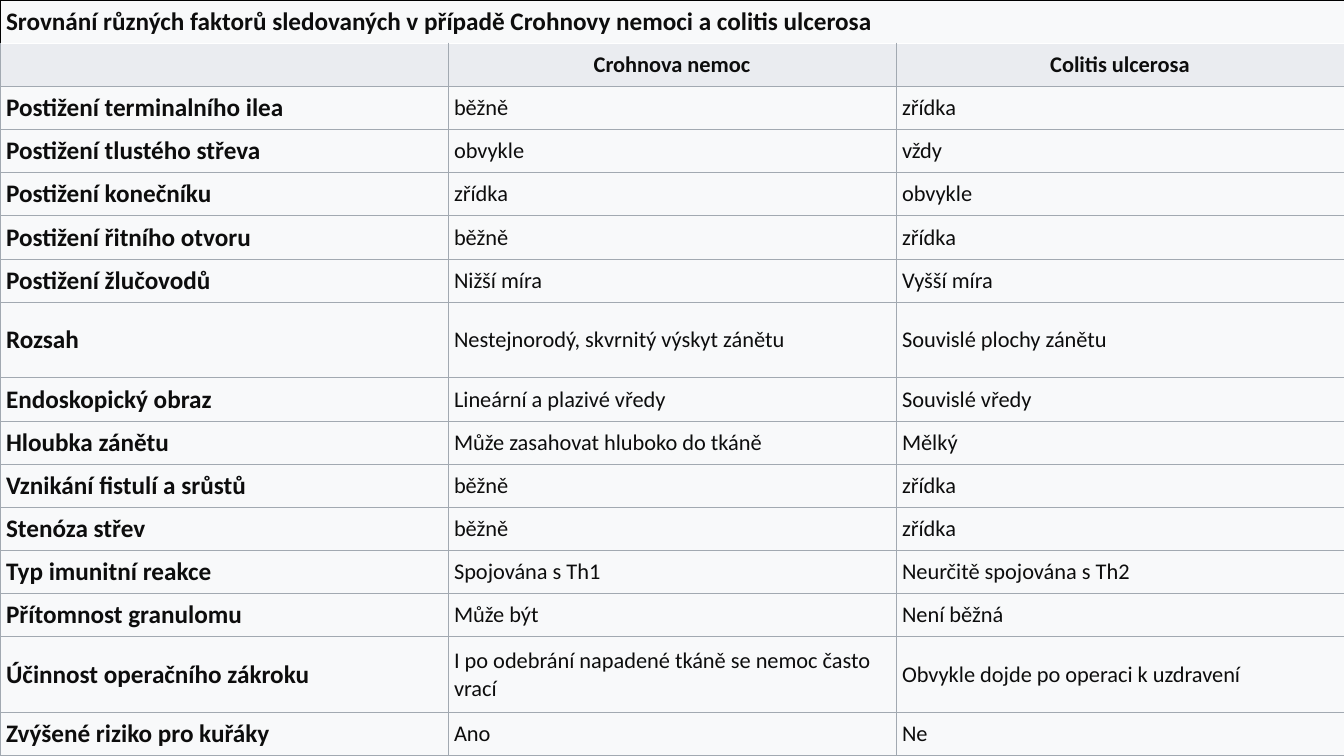
"""Build a slide comparing Crohn's disease with ulcerative colitis."""
import pptx
import pptx.dml.color
import pptx.enum.text
import pptx.oxml
import pptx.oxml.ns
import pptx.util

TITLE = "Srovnání různých faktorů sledovaných v případě Crohnovy nemoci a colitis ulcerosa"
DISEASES = ("", "Crohnova nemoc", "Colitis ulcerosa")
FACTORS = [
    ("Postižení terminalního ilea", "běžně", "zřídka"),
    ("Postižení tlustého střeva", "obvykle", "vždy"),
    ("Postižení konečníku", "zřídka", "obvykle"),
    ("Postižení řitního otvoru", "běžně", "zřídka"),
    ("Postižení žlučovodů", "Nižší míra", "Vyšší míra"),
    ("Rozsah", "Nestejnorodý, skvrnitý výskyt zánětu", "Souvislé plochy zánětu"),
    ("Endoskopický obraz", "Lineární a plazivé vředy", "Souvislé vředy"),
    ("Hloubka zánětu", "Může zasahovat hluboko do tkáně", "Mělký"),
    ("Vznikání fistulí a srůstů", "běžně", "zřídka"),
    ("Stenóza střev", "běžně", "zřídka"),
    ("Typ imunitní reakce", "Spojována s Th1", "Neurčitě spojována s Th2"),
    ("Přítomnost granulomu", "Může být", "Není běžná"),
    ("Účinnost operačního zákroku", "I po odebrání napadené tkáně se nemoc často vrací",
     "Obvykle dojde po operaci k uzdravení"),
    ("Zvýšené riziko pro kuřáky", "Ano", "Ne"),
]
TALL_FACTORS = ("Rozsah", "Účinnost operačního zákroku")
COLORS = {"text": "0D0D0D", "body": "F8F9FA", "header": "EAECF0",
          "grid": "A2A9B1", "title_edge": "000000"}
FONT = "Calibri"
WIDTH, HEIGHT, TALL_ROW = 13.33, 7.5, 0.75

Inches = pptx.util.Inches
RGB = pptx.dml.color.RGBColor.from_string


def set_borders(cell, color, sides):
    properties = cell._tc.get_or_add_tcPr()
    for position, side in enumerate(sides):
        properties.insert(position, pptx.oxml.parse_xml(
            f'<a:ln{side} {pptx.oxml.ns.nsdecls("a")} w="9525"><a:solidFill>'
            f'<a:srgbClr val="{color}"/></a:solidFill></a:ln{side}>'))


def style_cell(cell, text, size, bold, fill, edge, sides="LRTB", centered=False):
    cell.fill.solid()
    cell.fill.fore_color.rgb = RGB(COLORS[fill])
    set_borders(cell, COLORS[edge], sides)
    cell.margin_left = cell.margin_right = Inches(0.06)
    cell.margin_top = cell.margin_bottom = Inches(0.03)
    cell.vertical_anchor = pptx.enum.text.MSO_ANCHOR.MIDDLE
    cell.text_frame.text = text
    paragraph = cell.text_frame.paragraphs[0]
    if centered:
        paragraph.alignment = pptx.enum.text.PP_ALIGN.CENTER
    for run in paragraph.runs:
        run.font.name = FONT
        run.font.size = pptx.util.Pt(size)
        run.font.bold = bold
        run.font.color.rgb = RGB(COLORS["text"])


def main():
    deck = pptx.Presentation()
    deck.slide_width, deck.slide_height = Inches(WIDTH), Inches(HEIGHT)
    slide = deck.slides.add_slide(deck.slide_layouts[6])
    row_count = len(FACTORS) + 2
    comparison = slide.shapes.add_table(
        row_count, len(DISEASES), 0, 0, Inches(WIDTH), Inches(HEIGHT)).table
    comparison.first_row = comparison.horz_banding = False

    short_row = (HEIGHT - len(TALL_FACTORS) * TALL_ROW) / (row_count - len(TALL_FACTORS))
    for row, (factor, *_) in zip(comparison.rows, [(TITLE,), DISEASES, *FACTORS]):
        row.height = Inches(TALL_ROW if factor in TALL_FACTORS else short_row)

    comparison.cell(0, 0).merge(comparison.cell(0, len(DISEASES) - 1))
    for column, disease in enumerate(DISEASES):
        style_cell(comparison.cell(0, column), "" if column else TITLE,
                   18, True, "body", "title_edge")
        style_cell(comparison.cell(1, column), disease,
                   16, True, "header", "grid", "LRB", centered=True)
    for row_index, factor_row in enumerate(FACTORS, start=2):
        for column, text in enumerate(factor_row):
            is_factor = column == 0
            style_cell(comparison.cell(row_index, column), text,
                       18 if is_factor else 16, is_factor, "body", "grid")
    deck.save("out.pptx")


if __name__ == "__main__":
    main()
